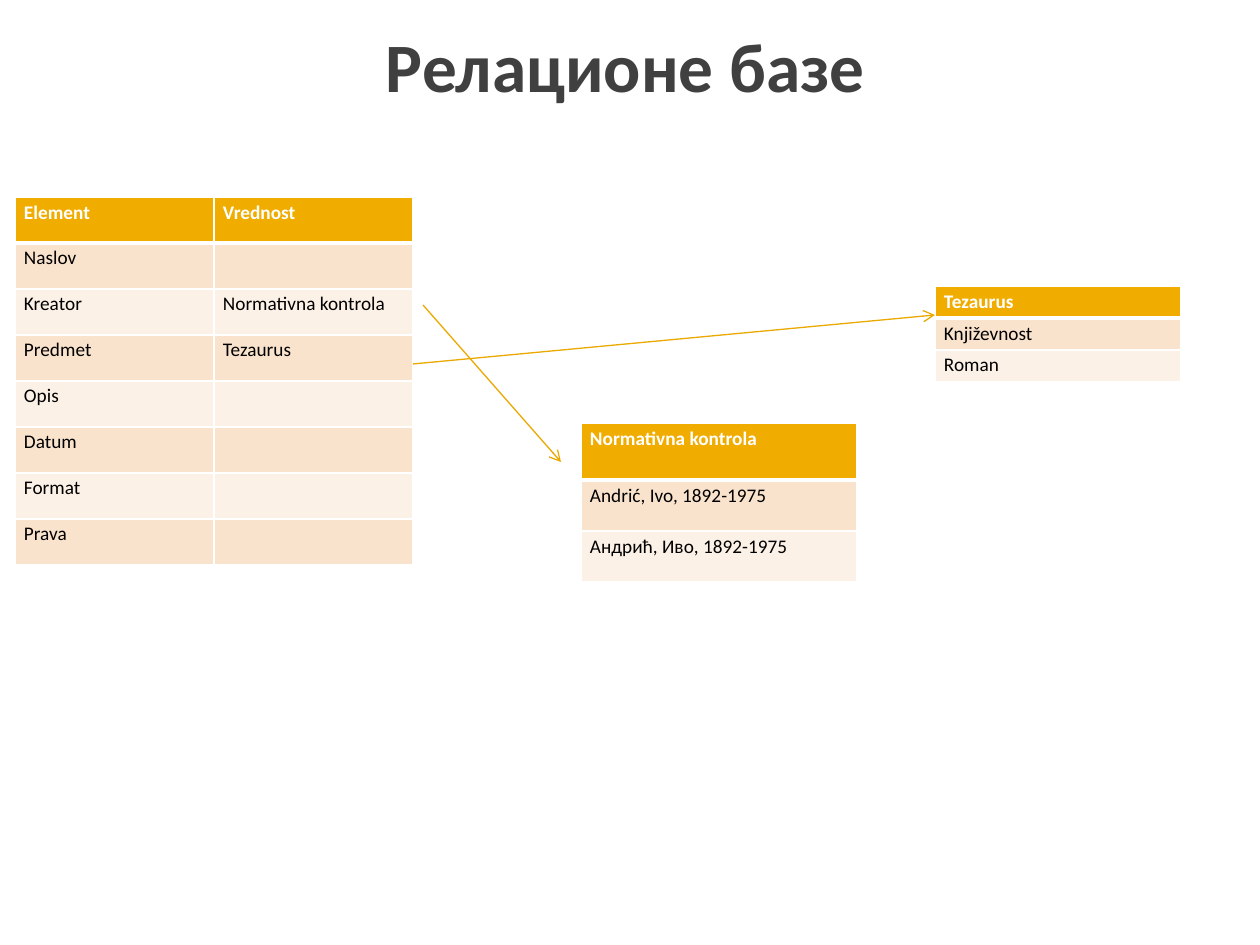
from dataclasses import dataclass

from lxml.etree import SubElement
from pptx import Presentation
from pptx.dml.color import RGBColor
from pptx.enum.shapes import MSO_CONNECTOR
from pptx.enum.text import MSO_ANCHOR, MSO_AUTO_SIZE, PP_ALIGN
from pptx.oxml.ns import qn
from pptx.util import Emu, Pt


@dataclass(frozen=True)
class Theme:
    font: str = "Calibri"
    title: str = "404040"
    text: str = "000000"
    white: str = "FFFFFF"
    head: str = "F0AD00"
    bands: tuple = ("FCF1E7", "F9E3CC")
    line: str = "EBA900"
    big: float = 39.6
    small: float = 11
    thin: float = 0.75
    edge: float = 1
    rule: float = 3


def px(count):
    return Emu(round(count * 914400 / 126))


class Board:
    def __init__(self, slide, theme):
        self.slide = slide
        self.theme = theme

    def style(self, para, size, color, bold):
        for run in para.runs:
            run.font.name = self.theme.font
            run.font.size = Pt(size)
            run.font.bold = bold
            run.font.color.rgb = RGBColor.from_string(color)

    def title(self, text, left, top, width, height):
        shape = self.slide.shapes.title
        shape.left, shape.top = px(left), px(top)
        shape.width, shape.height = px(width), px(height)
        frame = shape.text_frame
        frame.text = text
        frame.auto_size = MSO_AUTO_SIZE.NONE
        frame.vertical_anchor = MSO_ANCHOR.MIDDLE
        para = frame.paragraphs[0]
        para.alignment = PP_ALIGN.CENTER
        self.style(para, self.theme.big, self.theme.title, True)

    def border(self, cell, side, width):
        props = cell._tc.get_or_add_tcPr()
        line = SubElement(props, qn(f"a:ln{side}"), w=str(Pt(width)))
        fill = SubElement(line, qn("a:solidFill"))
        SubElement(fill, qn("a:srgbClr"), val=self.theme.white)

    def cell(self, cell, text, row):
        theme = self.theme
        head = row == 0
        cell.margin_left = cell.margin_right = px(9)
        cell.margin_top = cell.margin_bottom = 0
        for side in "LRTB":
            thick = (row, side) in ((0, "B"), (1, "T"))
            self.border(cell, side, theme.rule if thick else theme.edge)
        cell.fill.solid()
        color = theme.head if head else theme.bands[row % 2]
        cell.fill.fore_color.rgb = RGBColor.from_string(color)
        cell.text = text
        para = cell.text_frame.paragraphs[0]
        para.line_spacing = 1.15
        para.font.size = Pt(theme.small)
        self.style(para, theme.small, theme.white if head else theme.text, head)

    def table(self, rows, left, top, width, first, other):
        height = first + other * (len(rows) - 1)
        cols = len(rows[0])
        frame = self.slide.shapes.add_table(
            len(rows), cols, px(left), px(top), px(width), px(height))
        grid = frame.table
        for col in grid.columns:
            col.width = px(width // cols)
        for row, texts in enumerate(rows):
            grid.rows[row].height = px(other if row else first)
            for col, text in enumerate(texts):
                self.cell(grid.cell(row, col), text, row)

    def arrow(self, start, end):
        link = self.slide.shapes.add_connector(
            MSO_CONNECTOR.STRAIGHT, *map(px, start + end))
        link.line.color.rgb = RGBColor.from_string(self.theme.line)
        link.line.width = Pt(self.theme.thin)
        SubElement(link.line._get_or_add_ln(), qn("a:tailEnd"), type="arrow")
        SubElement(link._element.spPr, qn("a:effectLst"))


def main():
    deck = Presentation()
    deck.slide_width, deck.slide_height = px(1260), px(945)
    board = Board(deck.slides.add_slide(deck.slide_layouts[5]), Theme())
    board.title("Релационе базе", 15, 16, 1221, 98)

    record = [
        ("Element", "Vrednost"),
        ("Naslov", ""),
        ("Kreator", "Normativna kontrola"),
        ("Predmet", "Tezaurus"),
        ("Opis", ""),
        ("Datum", ""),
        ("Format", ""),
        ("Prava", ""),
    ]
    names = [("Normativna kontrola",), ("Andrić, Ivo, 1892-1975",),
             ("Андрић, Иво, 1892-1975",)]
    terms = [("Tezaurus",), ("Književnost",), ("Roman",)]
    board.table(record, 15, 197, 398, 46, 46)
    board.table(names, 581, 423, 276, 57, 51)
    board.table(terms, 935, 286, 246, 32, 32)

    board.arrow((423, 305), (561, 462))
    board.arrow((413, 364), (935, 315))
    deck.save("out.pptx")


if __name__ == "__main__":
    main()
